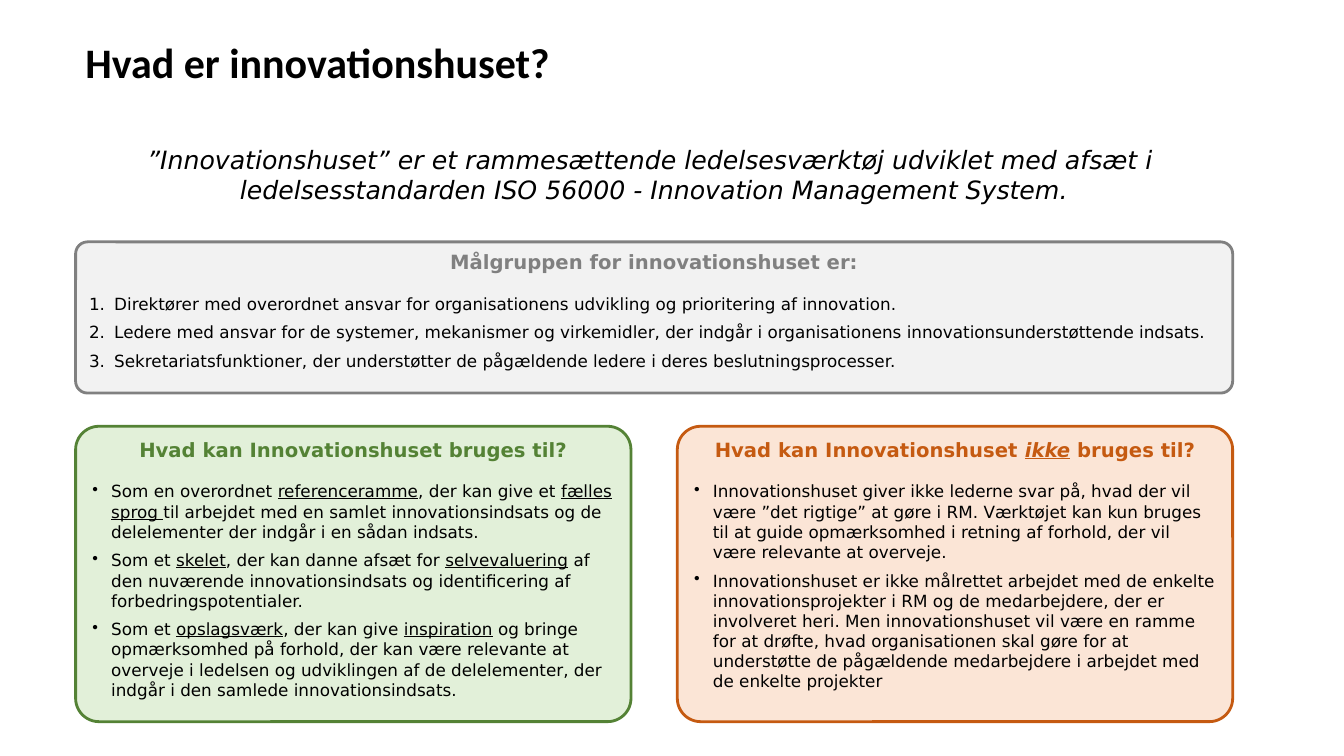
from lxml import etree
from pptx import Presentation
from pptx.dml.color import RGBColor
from pptx.enum.shapes import MSO_SHAPE
from pptx.enum.text import MSO_ANCHOR, PP_ALIGN
from pptx.oxml.ns import qn
from pptx.util import Pt

ROUNDED = MSO_SHAPE.ROUNDED_RECTANGLE
TOP = MSO_ANCHOR.TOP
LEFT, CENTER = PP_ALIGN.LEFT, PP_ALIGN.CENTER

BLACK = RGBColor(0x00, 0x00, 0x00)
WHITE = RGBColor(0xFF, 0xFF, 0xFF)
GREY, PALE_GREY = RGBColor(0x80, 0x80, 0x80), RGBColor(0xF2, 0xF2, 0xF2)
GREEN, PALE_GREEN = RGBColor(0x54, 0x82, 0x35), RGBColor(0xE2, 0xF0, 0xD9)
ORANGE, PALE_ORANGE = RGBColor(0xC5, 0x5A, 0x11), RGBColor(0xFB, 0xE5, 0xD6)

BODY_FONT = "DejaVu Sans"
MARGIN = 54
FULL_WIDTH, HALF_WIDTH = 826.5, 396.7
RIGHT_COLUMN = MARGIN + FULL_WIDTH - HALF_WIDTH

deck = Presentation()
deck.slide_width, deck.slide_height = Pt(960), Pt(540)
page = deck.slides.add_slide(deck.slide_layouts[6])


def add_panel(left, top, width, height, rounding, fill):
    box = page.shapes.add_shape(ROUNDED, Pt(left), Pt(top), Pt(width), Pt(height))
    box.adjustments[0] = rounding
    box.shadow.inherit = False
    box.fill.solid()
    box.fill.fore_color.rgb = fill
    box.line.fill.background()
    box.text_frame.word_wrap = True
    box.text_frame.vertical_anchor = TOP
    return box


def add_spans(para, text, size, color, bold=False, italic=False):
    """Text between underscores is underlined, and italic in bold headings."""
    for index, part in enumerate(text.split("_")):
        marked = index % 2 == 1
        span = para.add_run()
        span.text = part
        span.font.name = BODY_FONT
        span.font.size = Pt(size)
        span.font.color.rgb = color
        span.font.bold = bold
        span.font.italic = italic or (bold and marked)
        span.font.underline = marked


# Title
title = page.shapes.add_textbox(Pt(MARGIN), Pt(22.3), Pt(714), Pt(44))
title.text_frame.word_wrap = True
title.text_frame.text = "Hvad er innovationshuset?"
title_font = title.text_frame.paragraphs[0].runs[0].font
title_font.name = "Calibri"
title_font.size = Pt(30)
title_font.bold = True
title_font.color.rgb = BLACK

# Definition
definition = add_panel(MARGIN, 99.4, FULL_WIDTH, 60.5, 0, WHITE)
definition_frame = definition.text_frame
definition_lines = [
    "”Innovationshuset” er et rammesættende ledelsesværktøj udviklet med afsæt i ",
    "ledelsesstandarden ISO 56000 - Innovation Management System.",
]
for index, line in enumerate(definition_lines):
    para = definition_frame.add_paragraph() if index else definition_frame.paragraphs[0]
    para.alignment = CENTER
    add_spans(para, line, 18, BLACK, italic=True)

# Panels: place, colours, list style (indent, bullet tag, attributes), heading, items
numbered = (18, "a:buAutoNum", {"type": "arabicPeriod"})
bulleted = (13.5, "a:buChar", {"char": "•"})
panels = [
    ((MARGIN, 304.5, HALF_WIDTH, 211), PALE_GREEN, GREEN, bulleted,
     "Hvad kan Innovationshuset bruges til?",
     ["Som en overordnet _referenceramme_, der kan give et _fælles sprog _til "
      "arbejdet med en samlet innovationsindsats og de delelementer der indgår "
      "i en sådan indsats.",
      "Som et _skelet_, der kan danne afsæt for _selvevaluering_ af den nuværende "
      "innovationsindsats og identificering af forbedringspotentialer.",
      "Som et _opslagsværk_, der kan give _inspiration_ og bringe opmærksomhed på "
      "forhold, der kan være relevante at overveje i ledelsen og udviklingen af de "
      "delelementer, der indgår i den samlede innovationsindsats."]),
    ((RIGHT_COLUMN, 304.5, HALF_WIDTH, 211), PALE_ORANGE, ORANGE, bulleted,
     "Hvad kan Innovationshuset _ikke_ bruges til?",
     ["Innovationshuset giver ikke lederne svar på, hvad der vil være ”det rigtige” "
      "at gøre i RM. Værktøjet kan kun bruges til at guide opmærksomhed i retning "
      "af forhold, der vil være relevante at overveje.",
      "Innovationshuset er ikke målrettet arbejdet med de enkelte "
      "innovationsprojekter i RM og de medarbejdere, der er involveret heri. Men "
      "innovationshuset vil være en ramme for at drøfte, hvad organisationen skal "
      "gøre for at understøtte de pågældende medarbejdere i arbejdet med de enkelte "
      "projekter"]),
    ((MARGIN, 172.8, FULL_WIDTH, 108), PALE_GREY, GREY, numbered,
     "Målgruppen for innovationshuset er:",
     ["Direktører med overordnet ansvar for organisationens udvikling og "
      "prioritering af innovation.",
      "Ledere med ansvar for de systemer, mekanismer og virkemidler, der indgår i "
      "organisationens innovationsunderstøttende indsats.",
      "Sekretariatsfunktioner, der understøtter de pågældende ledere i deres "
      "beslutningsprocesser."]),
]
for place, fill, accent, (indent, tag, attributes), heading, items in panels:
    box = add_panel(*place, 0.079, fill)
    box.line.color.rgb = accent
    box.line.width = Pt(2)

    # Heading
    para = box.text_frame.paragraphs[0]
    para.alignment = CENTER
    para.space_after = Pt(14)
    add_spans(para, heading, 14, accent, bold=True)

    # List
    for item in items:
        para = box.text_frame.add_paragraph()
        properties = para._p.get_or_add_pPr()
        properties.set("marL", str(Pt(indent)))
        properties.set("indent", str(-Pt(indent)))
        etree.SubElement(properties, qn(tag), attributes)
        para.alignment = LEFT
        para.space_after = Pt(6)
        add_spans(para, item, 12, BLACK)

deck.save("out.pptx")
